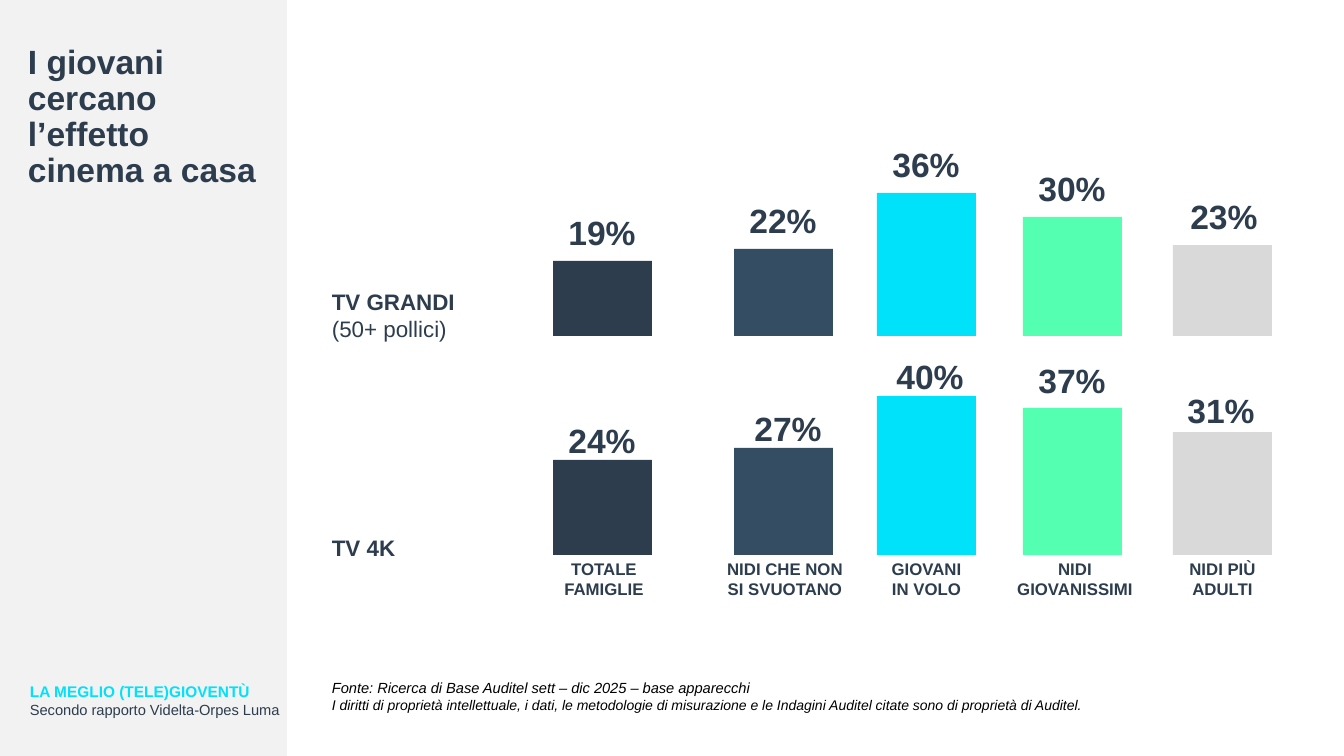
from pptx import Presentation
from pptx.dml.color import RGBColor
from pptx.enum.shapes import MSO_SHAPE as Shape
from pptx.enum.text import PP_ALIGN as Align
from pptx.util import Pt

NAVY = RGBColor(0x2D, 0x3D, 0x4E)
BLUE = RGBColor(0x35, 0x4D, 0x63)
CYAN = RGBColor(0x00, 0xE1, 0xFA)
GREEN = RGBColor(0x55, 0xFF, 0xB2)
GREY = RGBColor(0xD9, 0xD9, 0xD9)
PALE = RGBColor(0xF2, 0xF2, 0xF2)
BLACK = RGBColor(0, 0, 0)

TITLE = "I giovani cercano l’effetto cinema a casa"
# text, size, colour, bold, italic
FOOTER = [
    ("LA MEGLIO (TELE)GIOVENTÙ", 11, CYAN, True, False),
    ("Secondo rapporto Videlta-Orpes Luma", 10.5, NAVY, False, False),
]
SOURCE = [
    ("Fonte: Ricerca di Base Auditel sett – dic 2025 – base apparecchi",
     10.5, BLACK, False, True),
    ("I diritti di proprietà intellettuale, i dati, le metodologie di "
     "misurazione e le Indagini Auditel citate sono di proprietà di Auditel.",
     10, BLACK, False, True),
]
# name, name left, name width, bar left, colour
GROUPS = [
    ("TOTALE FAMIGLIE", 539, 130, 553, NAVY),
    ("NIDI CHE NON SI SVUOTANO", 716, 138, 734, BLUE),
    ("GIOVANI IN VOLO", 877, 99, 877, CYAN),
    ("NIDI GIOVANISSIMI", 1000, 150, 1023, GREEN),
    ("NIDI PIÙ ADULTI", 1173, 99, 1173, GREY),
]
# heading, heading top, height, baseline, (percent, label shift, label rise)
ROWS = [
    ([("TV GRANDI", 16, NAVY, True, False),
      ("(50+ pollici)", 16, NAVY, False, False)], 283, 92, 336,
     [(19, 0, 49), (22, 0, 49), (36, 0, 49), (30, 0, 49), (23, 2, 49)]),
    ([("TV 4K", 16, NAVY, True, False)], 529, 37, 555,
     [(24, 0, 40), (27, 5, 40), (40, 4, 40), (37, 0, 48), (31, -1, 42)]),
]
BAR_W, UNIT = 99, 3.97
TAG_W, TAG_H = 68, 40
NAME_TOP, NAME_H = 554, 50
TEXT_X = 322


def emu(px):
    return round(px * 914400 / 100.8)


def add_rect(slide, left, top, width, height, color):
    rect = slide.shapes.add_shape(
        Shape.RECTANGLE, *map(emu, (left, top, width, height)))
    rect.shadow.inherit = False
    rect.fill.solid()
    rect.fill.fore_color.rgb = color
    rect.line.fill.background()


def add_text(slide, left, top, width, height, lines, align=Align.LEFT):
    """Add a text box with one paragraph for each line."""
    box = slide.shapes.add_textbox(*map(emu, (left, top, width, height)))
    frame = box.text_frame
    frame.word_wrap = True
    frame.text = "\n".join(line[0] for line in lines)
    for par, (_, size, color, bold, italic) in zip(frame.paragraphs, lines):
        par.alignment = align
        font = par.runs[0].font
        font.name = "Arial"
        font.size = Pt(size)
        font.color.rgb = color
        font.bold = bold
        font.italic = italic
    return frame


def add_tag(slide, left, top, value):
    frame = add_text(slide, left, top, TAG_W, TAG_H,
                     [(f"{value}%", 24, NAVY, True, False)], Align.CENTER)
    frame.word_wrap = False
    frame.margin_left = frame.margin_right = 0
    frame.margin_top = frame.margin_bottom = 0


def main():
    prs = Presentation()
    prs.slide_width, prs.slide_height = emu(1344), emu(756)
    slide = prs.slides.add_slide(prs.slide_layouts[6])

    add_rect(slide, 0, 0, 287, 756, PALE)
    add_text(slide, 20, 677, 583, 46, FOOTER)
    title = add_text(slide, 18, 40, 262, 338,
                     [(TITLE, 24, NAVY, True, False)])
    title.paragraphs[0].line_spacing = 0.9
    add_text(slide, TEXT_X, 674, 796, 62, SOURCE)

    for head, top, height, base, values in ROWS:
        add_text(slide, TEXT_X, top, 255, height, head)
        for (_, _, _, left, color), (value, shift, rise) in zip(GROUPS, values):
            tall = round(value * UNIT)
            add_rect(slide, left, base - tall, BAR_W, tall, color)
            add_tag(slide, left + (BAR_W - TAG_W) // 2 + shift,
                    base - tall - rise, value)

    for name, left, width, _, _ in GROUPS:
        add_text(slide, left, NAME_TOP, width, NAME_H,
                 [(name, 12, NAVY, True, False)], Align.CENTER)
    prs.save("out.pptx")


if __name__ == "__main__":
    main()
